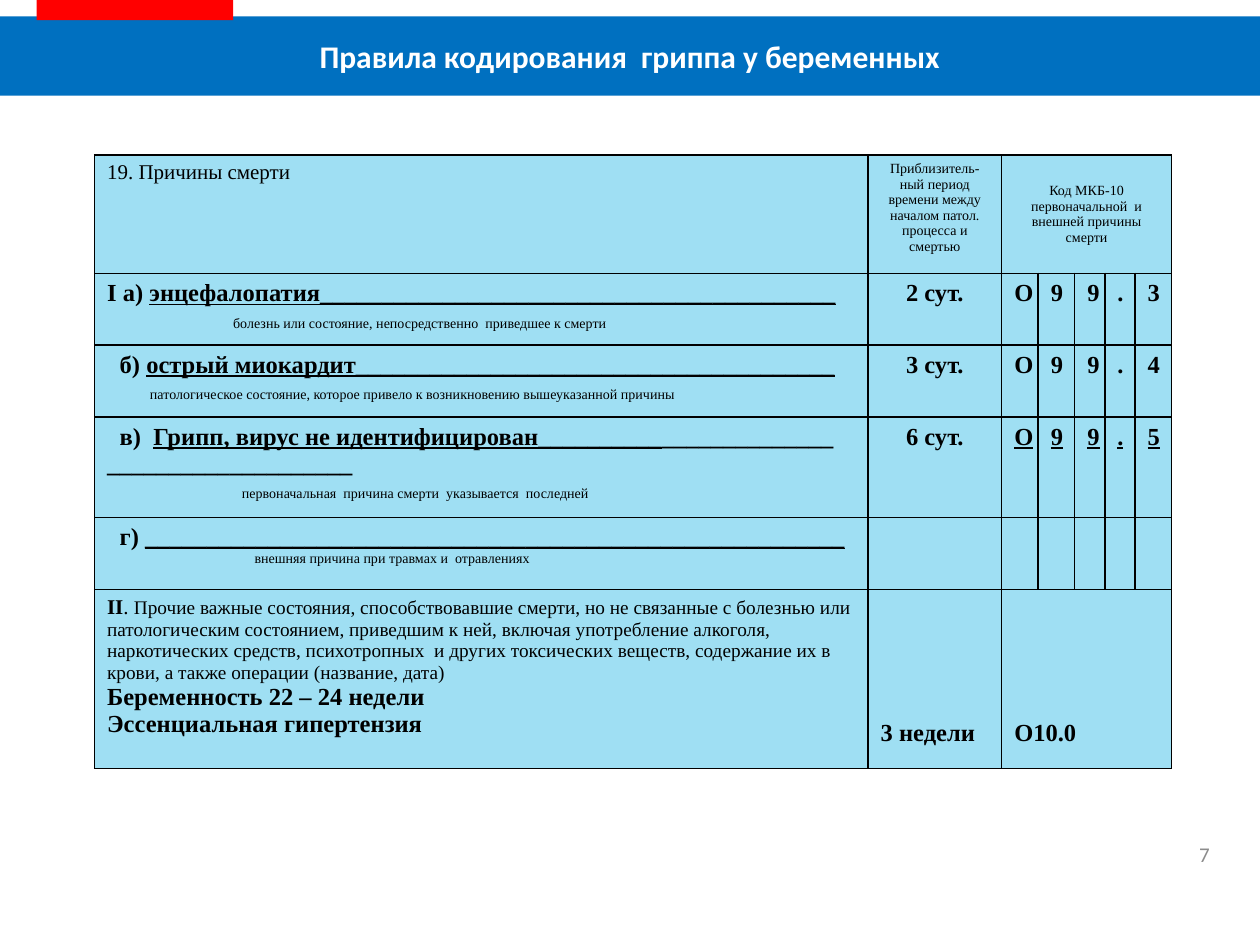
from dataclasses import dataclass

from lxml import etree
from pptx import Presentation
from pptx.dml.color import RGBColor
from pptx.enum import shapes, text
from pptx.oxml import ns
from pptx.util import Inches, Pt

WHITE = RGBColor(0xFF, 0xFF, 0xFF)
BLACK = RGBColor(0, 0, 0)
RED = RGBColor(0xFF, 0, 0)
BANNER_BLUE = RGBColor(0x00, 0x70, 0xC0)
CELL_BLUE = RGBColor(0x9F, 0xDF, 0xF3)
NUMBER_GREY = RGBColor(0x8C, 0x8C, 0x8C)
LEFT, CENTER, RIGHT = text.PP_ALIGN.LEFT, text.PP_ALIGN.CENTER, text.PP_ALIGN.RIGHT
TOP, MIDDLE, BOTTOM = text.MSO_ANCHOR.TOP, text.MSO_ANCHOR.MIDDLE, text.MSO_ANCHOR.BOTTOM

COLUMN_WIDTHS = [6.14, 1.06, 0.29, 0.29, 0.24, 0.24, 0.29]
ROW_HEIGHTS = [0.94, 0.57, 0.57, 0.8, 0.57, 1.42]


@dataclass
class Run:
    """A stretch of text with one format."""
    wording: str
    size: float = 14
    bold: bool = True
    underline: bool = False


@dataclass
class Para:
    """A paragraph made of runs."""
    runs: list
    align: int = LEFT
    indent: float = 0
    before: float = 0


def caption(wording, indent, before=5):
    """Return the small explanatory line under a cause of death."""
    return Para([Run(wording, 8, False)], indent=indent, before=before)


CAUSES = [
    ([Para([Run("I а) "), Run("энцефалопатия" + "_" * 42, underline=True)]),
      caption("болезнь или состояние, непосредственно  приведшее к смерти", 1)],
     "2 сут.", "О99.3", False),
    ([Para([Run("б) "), Run("острый миокардит" + "_" * 39, underline=True)], indent=0.1),
      caption("патологическое состояние, которое привело к возникновению вышеуказанной причины", 0.34)],
     "3 сут.", "О99.4", False),
    ([Para([Run("в)  "), Run("Грипп, вирус не идентифицирован" + "_" * 10, underline=True),
            Run("_" * 14)], indent=0.1),
      Para([Run("_" * 20)]),
      caption("первоначальная  причина смерти  указывается  последней", 1.07)],
     "6 сут.", "О99.5", True),
    ([Para([Run("г) "), Run("_" * 57, underline=True)], indent=0.1),
      caption("внешняя причина при травмах и  отравлениях", 1.17, 0)],
     "", "", False),
]
OTHER_CONDITIONS = [
    Para([Run("II", 12), Run(". ", 12, False),
          Run("Прочие важные состояния, способствовавшие смерти, но не связанные с болезнью или "
              "патологическим состоянием, приведшим к ней, включая употребление алкоголя, "
              "наркотических средств, психотропных  и других токсических веществ, содержание их в "
              "крови, а также операции (название, дата)", 11, False)]),
    Para([Run("Беременность 22 – 24 недели")]),
    Para([Run("Эссенциальная гипертензия")]),
]


def add_run(paragraph, run, font_name, color):
    """Append one formatted run to a paragraph."""
    piece = paragraph.add_run()
    piece.text = run.wording
    font = piece.font
    font.name, font.size, font.color.rgb = font_name, Pt(run.size), color
    font.bold, font.underline = run.bold, run.underline


def style_cell(cell):
    """Give a cell its black borders and light blue fill."""
    properties = cell._tc.get_or_add_tcPr()
    for side in ("a:lnL", "a:lnR", "a:lnT", "a:lnB"):
        line = etree.SubElement(properties, ns.qn(side), w=str(Pt(1)))
        fill = etree.SubElement(line, ns.qn("a:solidFill"))
        etree.SubElement(fill, ns.qn("a:srgbClr"), val=str(BLACK))
    cell.fill.solid()
    cell.fill.fore_color.rgb = CELL_BLUE


def write_cell(cell, paras, anchor=TOP):
    """Write paragraphs into a table cell."""
    cell.vertical_anchor = anchor
    frame = cell.text_frame
    for index, para in enumerate(paras):
        paragraph = frame.add_paragraph() if index else frame.paragraphs[0]
        paragraph.alignment = para.align
        paragraph.space_before = Pt(para.before)
        paragraph._p.get_or_add_pPr().set("marL", str(Inches(para.indent)))
        for run in para.runs:
            add_run(paragraph, run, "Times New Roman", BLACK)


def add_banner(slide, left, top, width, height):
    """Place the title on a blue band with a red tab above it."""
    title = slide.shapes.title
    title.left, title.top, title.width, title.height = map(Inches, (left, top, width, height))
    title.fill.solid()
    title.fill.fore_color.rgb = BANNER_BLUE
    title.text_frame.vertical_anchor = MIDDLE
    paragraph = title.text_frame.paragraphs[0]
    paragraph.alignment = CENTER
    add_run(paragraph, Run("Правила кодирования  гриппа у беременных", 18), "Calibri", WHITE)
    tab = slide.shapes.add_shape(shapes.MSO_SHAPE.RECTANGLE, Inches(left + 0.29),
                                 Inches(top - 0.13), Inches(1.56), Inches(0.16))
    tab.shadow.inherit = False
    tab.fill.solid()
    tab.fill.fore_color.rgb = RED
    tab.line.fill.background()


def add_causes_table(slide, left, top):
    """Place the table of causes of death with their codes."""
    frame = slide.shapes.add_table(len(ROW_HEIGHTS), len(COLUMN_WIDTHS), Inches(left), Inches(top),
                                   Inches(sum(COLUMN_WIDTHS)), Inches(sum(ROW_HEIGHTS)))
    table = frame.table
    table.first_row = table.horz_banding = False
    for column, width in zip(table.columns, COLUMN_WIDTHS):
        column.width = Inches(width)
    for row, height in zip(table.rows, ROW_HEIGHTS):
        row.height = Inches(height)
    for cell in table.iter_cells():
        style_cell(cell)
    last_row, last_column = len(ROW_HEIGHTS) - 1, len(COLUMN_WIDTHS) - 1
    for row in (0, last_row):
        table.cell(row, 2).merge(table.cell(row, last_column))

    write_cell(table.cell(0, 0), [Para([Run("19. Причины смерти", 12, False)])])
    write_cell(table.cell(0, 1), [Para([Run(
        "Приблизитель-ный период времени между началом патол. процесса и смертью", 8, False)], CENTER)])
    write_cell(table.cell(0, 2), [Para([Run(line, 8, False)], CENTER) for line in (
        "Код МКБ-10", "первоначальной  и внешней причины смерти")], MIDDLE)

    for row, (cause, period, code, underlined) in enumerate(CAUSES, 1):
        write_cell(table.cell(row, 0), cause)
        if period:
            write_cell(table.cell(row, 1), [Para([Run(period)], CENTER)])
        for column, symbol in enumerate(code, 2):
            code_cell = table.cell(row, column)
            code_cell.margin_right = 0
            write_cell(code_cell, [Para([Run(symbol, underline=underlined)])])

    write_cell(table.cell(last_row, 0), OTHER_CONDITIONS)
    for column, wording in ((1, "3 недели"), (2, "О10.0")):
        result_cell = table.cell(last_row, column)
        result_cell.margin_bottom = Inches(0.17)
        write_cell(result_cell, [Para([Run(wording)])], BOTTOM)


def add_page_number(slide, left, top, width, height):
    """Place the page number at the right of its box."""
    number = slide.shapes.add_textbox(*map(Inches, (left, top, width, height)))
    number.text_frame.word_wrap = True
    number.text_frame.vertical_anchor = MIDDLE
    paragraph = number.text_frame.paragraphs[0]
    paragraph.alignment = RIGHT
    add_run(paragraph, Run("7", 12, False), "Calibri", NUMBER_GREY)


def main():
    """Build the slide and save it."""
    deck = Presentation()
    deck.slide_width, deck.slide_height = Inches(10), Inches(7.5)
    slide = deck.slides.add_slide(deck.slide_layouts[5])
    add_banner(slide, 0, 0.13, 10, 0.63)
    add_causes_table(slide, 0.75, 1.23)
    add_page_number(slide, 7.37, 6.58, 2.33, 0.4)
    deck.save("out.pptx")


if __name__ == "__main__":
    main()
